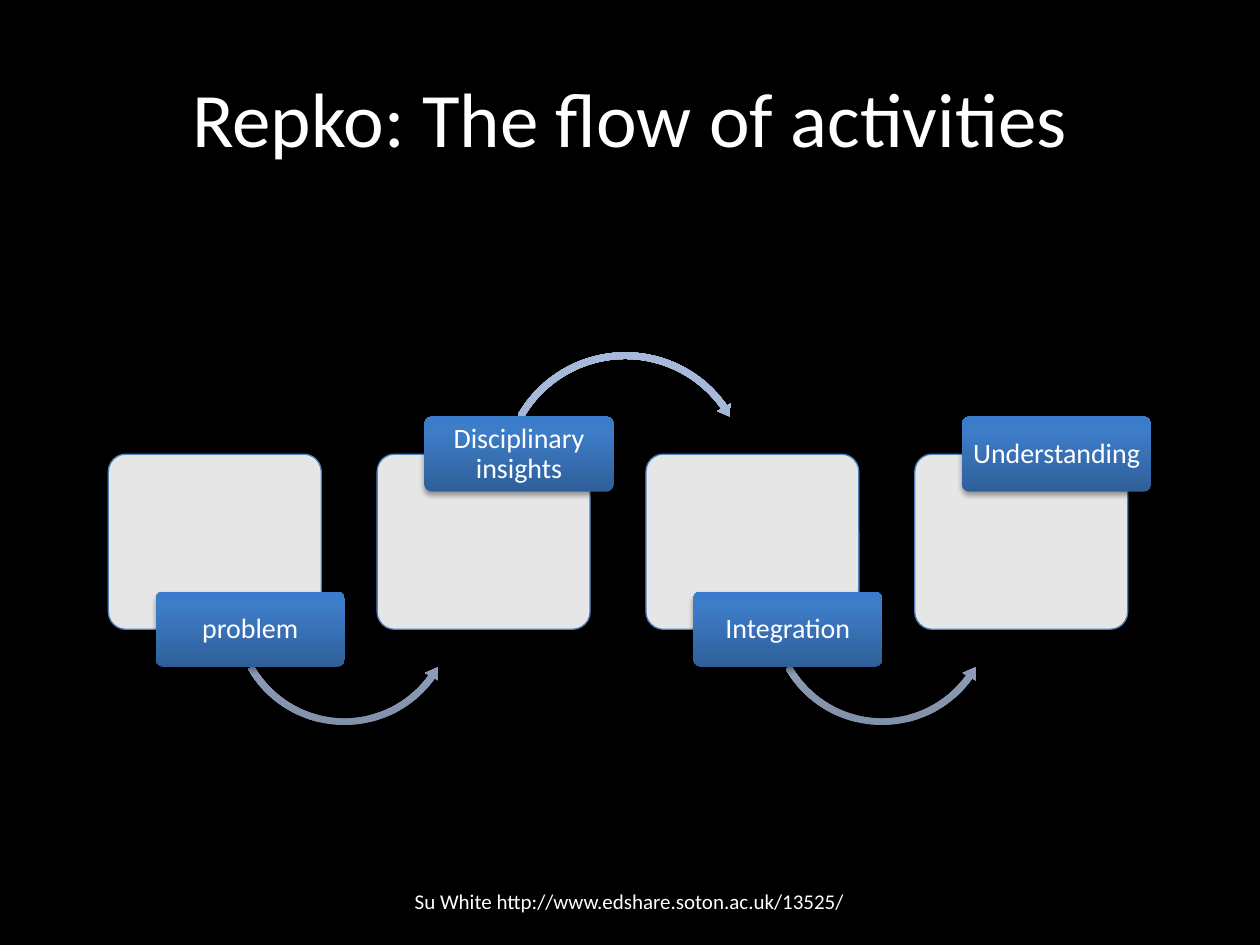
"""Build a slide showing a four-step flow of activities with alternating labels."""
from lxml import etree
from pptx import Presentation
from pptx.dml.color import RGBColor
from pptx.enum.shapes import MSO_SHAPE
from pptx.enum.text import MSO_ANCHOR, PP_ALIGN
from pptx.oxml.ns import qn
from pptx.util import Pt

ROUNDED = MSO_SHAPE.ROUNDED_RECTANGLE
CENTER, MIDDLE = PP_ALIGN.CENTER, MSO_ANCHOR.MIDDLE

TITLE = "Repko: The flow of activities"
FOOTER = "Su White http://www.edshare.soton.ac.uk/13525/"
STEPS = [("problem", "low"), ("Disciplinary insights", "high"),
         ("Integration", "low"), ("Understanding", "high")]

THEME = {
    "font": "Calibri", "background": "000000", "text": "FFFFFF",
    "card": "FFFFFF", "card_alpha": 90, "card_line": "4F81BD",
    "tag": [(0, "2F5F99"), (80, "3D7CC7"), (100, "3A7CCB")],
    "arrow": [(0, "818FA8"), (80, "A7B9DA"), (100, "A7BADC")],
    "title_size": 44, "tag_size": 16, "footer_size": 12,
}

TITLE_BOX = (36, 21.6, 648, 90)
FOOTER_BOX = (203.8, 500.4, 311.8, 28.8)
CARD_LEFT, CARD_TOP, CARD_WIDTH, CARD_HEIGHT = 61.9, 259.5, 121.7, 100.1
PITCH = 153.6
TAG_SHIFT, TAG_WIDTH, TAG_HEIGHT = 27, 108.2, 43
ARROWS = {
    "low": (MSO_SHAPE.LEFT_CIRCULAR_ARROW, 69, 285.1, 131.8,
            (0.029, 3.61, 21.365, 90.245, 0.034)),
    "high": (MSO_SHAPE.CIRCULAR_ARROW, 68.4, 198.7, 146.9,
             (0.026, 3.205, 195.04, 125.755, 0.031)),
}


def color(name):
    return RGBColor.from_string(THEME[name])


def add_color(parent, value, alpha=None):
    element = etree.SubElement(parent, qn("a:srgbClr"), val=value)
    if alpha is not None:
        etree.SubElement(element, qn("a:alpha"), val=str(alpha * 1000))


def write(shape, text, size, margins, spacing=1.0):
    frame = shape.text_frame
    horizontal, vertical = (Pt(margin) for margin in margins)
    settings = {"word_wrap": True, "vertical_anchor": MIDDLE,
                "margin_left": horizontal, "margin_right": horizontal,
                "margin_top": vertical, "margin_bottom": vertical}
    for name, value in settings.items():
        setattr(frame, name, value)
    paragraph = frame.paragraphs[0]
    paragraph.text = text
    paragraph.alignment = CENTER
    paragraph.line_spacing = spacing
    font = paragraph.runs[0].font
    font.name, font.size = THEME["font"], Pt(THEME[size])
    font.color.rgb = color("text")


def add_text(slide, box, text, size):
    write(slide.shapes.add_textbox(*map(Pt, box)), text, size, (7.2, 3.6))


def add_plain(slide, kind, box, adjustments):
    shape = slide.shapes.add_shape(kind, *map(Pt, box))
    shape.shadow.inherit = False
    for index, value in enumerate(adjustments):
        shape.adjustments[index] = value
    return shape


def add_card(slide, left):
    box = (left, CARD_TOP, CARD_WIDTH, CARD_HEIGHT)
    card = add_plain(slide, ROUNDED, box, [0.1])
    card.fill.solid()
    card.fill.fore_color.rgb = color("card")
    fill = card._element.spPr.find(qn("a:solidFill"))
    fill.remove(fill[0])
    add_color(fill, THEME["card"], THEME["card_alpha"])
    card.line.color.rgb = color("card_line")
    card.line.width = Pt(0.75)


def add_shaded(slide, kind, box, adjustments, stops):
    shape = add_plain(slide, kind, box, adjustments)
    shape.line.fill.background()
    shape.fill.gradient()
    shape.fill.gradient_angle = 90
    properties = shape._element.spPr
    stop_list = properties.find(".//" + qn("a:gsLst"))
    for stop in list(stop_list):
        stop_list.remove(stop)
    for position, value in THEME[stops]:
        stop = etree.SubElement(stop_list, qn("a:gs"), pos=str(position * 1000))
        add_color(stop, value)
    shadow = etree.SubElement(
        properties.find(qn("a:effectLst")), qn("a:outerShdw"),
        blurRad=str(Pt(3.1)), dist=str(Pt(1.8)), dir="5400000", rotWithShape="0")
    add_color(shadow, "000000", 35)
    return shape


def add_step(slide, index, label, side):
    left = CARD_LEFT + index * PITCH
    add_card(slide, left)
    if index < len(STEPS) - 1:
        kind, shift, top, size, adjustments = ARROWS[side]
        add_shaded(slide, kind, (left + shift, top, size, size), adjustments, "arrow")
    edge = CARD_TOP + (CARD_HEIGHT if side == "low" else 0)
    box = (left + TAG_SHIFT, edge - TAG_HEIGHT / 2, TAG_WIDTH, TAG_HEIGHT)
    tag = add_shaded(slide, ROUNDED, box, [0.1], "tag")
    write(tag, label, "tag_size", (2, 1.5), 0.9)


def main():
    presentation = Presentation()
    presentation.slide_width, presentation.slide_height = Pt(720), Pt(540)
    slide = presentation.slides.add_slide(presentation.slide_layouts[6])
    slide.background.fill.solid()
    slide.background.fill.fore_color.rgb = color("background")
    add_text(slide, TITLE_BOX, TITLE, "title_size")
    for index, (label, side) in enumerate(STEPS):
        add_step(slide, index, label, side)
    add_text(slide, FOOTER_BOX, FOOTER, "footer_size")
    presentation.save("out.pptx")


if __name__ == "__main__":
    main()
